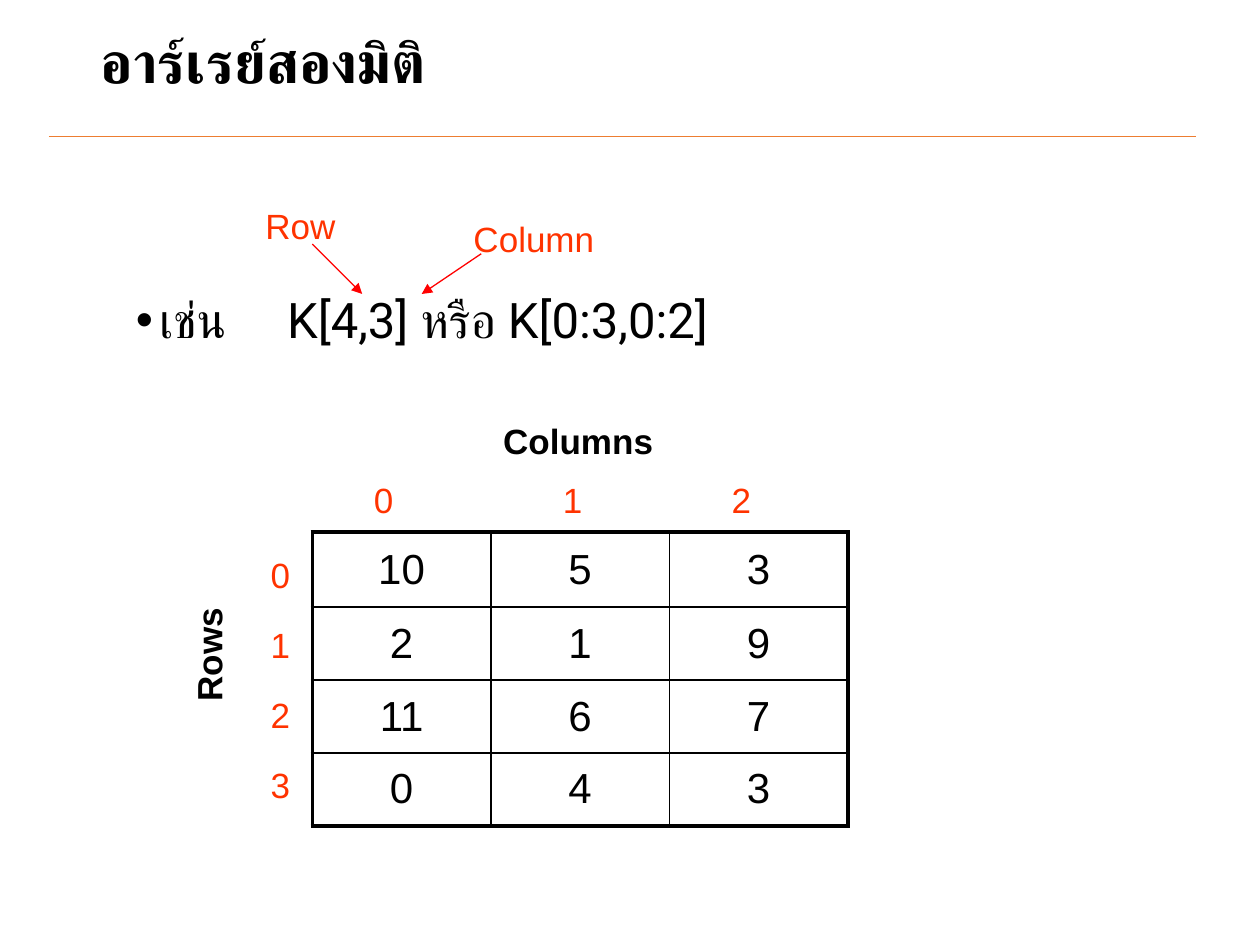
from pptx import Presentation
from pptx.dml.color import RGBColor
from pptx.enum import shapes, text
from pptx.oxml import parse_xml
from pptx.oxml.ns import nsdecls
from pptx.util import Pt

BLACK = RGBColor(0, 0, 0)
RED = RGBColor(0xFF, 0, 0)
LABEL = RGBColor(0xFF, 0x33, 0)
ORANGE = RGBColor(0xED, 0x7D, 0x31)

GRID = [[10, 5, 3], [2, 1, 9], [11, 6, 7], [0, 4, 3]]


def style(par, size, color=BLACK, bold=False, name="Arial"):
    for run in par.runs:
        font = run.font
        font.name, font.size, font.bold = name, Pt(size), bold
        font.color.rgb = color


def label(slide, x, y, w, words, color=LABEL, bold=False, h=31):
    box = slide.shapes.add_textbox(Pt(x), Pt(y), Pt(w), Pt(h))
    frame = box.text_frame
    frame.word_wrap = False
    frame.text = words
    style(frame.paragraphs[0], 20, color, bold)
    return box


def line(slide, x1, y1, x2, y2, color, width, arrow=False):
    link = slide.shapes.add_connector(
        shapes.MSO_CONNECTOR.STRAIGHT, Pt(x1), Pt(y1), Pt(x2), Pt(y2))
    link.line.color.rgb = color
    link.line.width = Pt(width)
    props = link._element.spPr
    if arrow:
        props.ln.append(parse_xml(f'<a:tailEnd {nsdecls("a")} type="triangle"/>'))
    props.append(parse_xml(f'<a:effectLst {nsdecls("a")}/>'))


def header(slide, x, y, w, h):
    title = slide.shapes.title
    title.left, title.top, title.width, title.height = Pt(x), Pt(y), Pt(w), Pt(h)
    frame = title.text_frame
    frame.text = "อาร์เรย์สองมิติ"
    frame.vertical_anchor = text.MSO_ANCHOR.MIDDLE
    par = frame.paragraphs[0]
    par.alignment = text.PP_ALIGN.LEFT
    par.line_spacing = 0.9
    style(par, 33, bold=True, name="Roboto")
    line(slide, x - 22.5, y + 68, x + 633, y + 68, ORANGE, 0.5)


def example(slide, x, y, w, h):
    """Bulleted declaration with arrows naming its two sizes."""
    box = slide.shapes.add_textbox(Pt(x), Pt(y), Pt(w), Pt(h))
    frame = box.text_frame
    frame.word_wrap = True
    frame.text = "เช่น\tK[4,3] หรือ K[0:3,0:2]"
    par = frame.paragraphs[0]
    par.line_spacing = 0.9
    par.space_before = Pt(7.5)
    style(par, 28, name="Roboto")
    props = par._p.get_or_add_pPr()
    props.set("marL", str(Pt(13.5)))
    props.set("indent", str(-Pt(13.5)))
    for xml in ('<a:buFont {} typeface="Arial"/>', '<a:buChar {} char="•"/>',
                f'<a:tabLst {{}}><a:tab pos="{Pt(86.5)}" algn="l"/></a:tabLst>'):
        props.append(parse_xml(xml.format(nsdecls("a"))))

    line(slide, x + 108, y - 26, x + 136.5, y + 2.5, RED, 0.75, True)
    line(slide, x + 204.5, y - 20.5, x + 170.5, y + 2.5, RED, 0.75, True)
    label(slide, x + 74, y - 52, 73, "Row")
    label(slide, x + 193, y - 44.5, 108, "Column")


def border(cell, edges):
    """Draw the cell's edges, given as side and width pairs in schema order."""
    props = cell._tc.get_or_add_tcPr()
    for spot, (side, width) in enumerate(edges):
        props.insert(spot, parse_xml(
            f'<a:ln{side} {nsdecls("a")} w="{Pt(width)}"><a:solidFill>'
            f'<a:srgbClr val="{BLACK}"/></a:solidFill></a:ln{side}>'))


def matrix(slide, x, y, w, h):
    """Table of values with row and column indexes around it."""
    rows, cols = len(GRID), len(GRID[0])
    table = slide.shapes.add_table(rows, cols, Pt(x), Pt(y), Pt(w), Pt(h)).table
    table.first_row = table.horz_banding = False
    for col in table.columns:
        col.width = Pt(w / cols)
    for r, row in enumerate(table.rows):
        row.height = Pt(43 if r == 0 else (h - 43) / (rows - 1))
        for c, cell in enumerate(row.cells):
            cell.text = str(GRID[r][c])
            cell.vertical_anchor = text.MSO_ANCHOR.MIDDLE
            cell.fill.background()
            par = cell.text_frame.paragraphs[0]
            par.alignment = text.PP_ALIGN.CENTER
            style(par, 24)
            outer = (("L", c == 0), ("R", c == cols - 1),
                     ("T", r == 0), ("B", r == rows - 1))
            border(cell, [(side, 2.25 if out else 1) for side, out in outer])

    for c, left in enumerate((28, 136, 232.5)):
        label(slide, x + left, y - 34, 26, str(c))
    for r in range(rows):
        label(slide, x - 31, y + 8.5 + 40 * r, 26, str(r))
    label(slide, x + 102, y - 68, 100, "Columns", BLACK, True)
    side = label(slide, x - 94.5, y + 53.5, 70, "Rows", BLACK, True)
    side.rotation = 270


def main():
    deck = Presentation()
    deck.slide_width, deck.slide_height = Pt(720), Pt(540)
    slide = deck.slides.add_slide(deck.slide_layouts[5])
    header(slide, 50.5, 10, 620.5, 54)
    example(slide, 70.5, 165.5, 391.5, 70.5)
    matrix(slide, 178.5, 304, 306, 168)
    deck.save("out.pptx")


if __name__ == "__main__":
    main()
